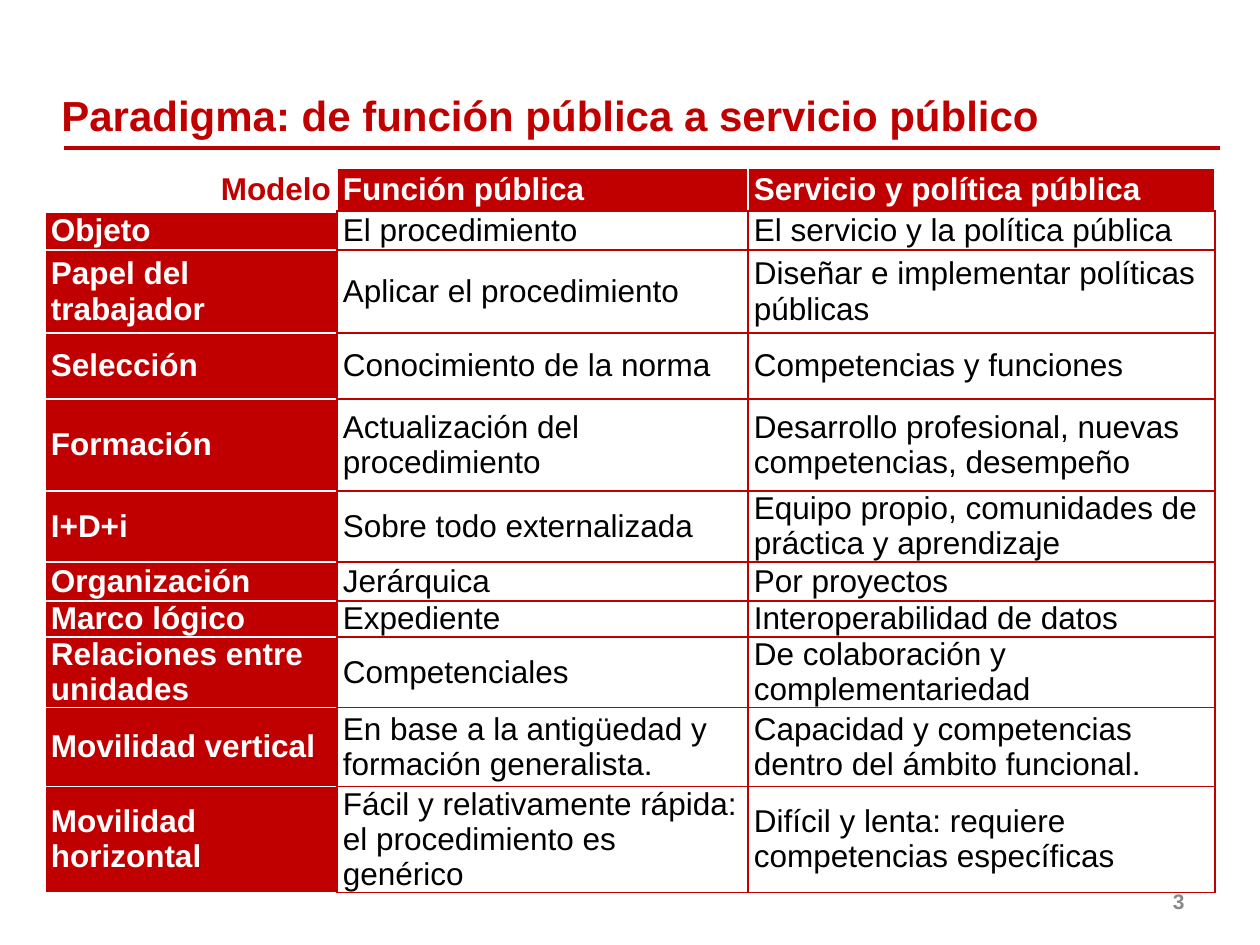
from lxml import etree
from pptx import Presentation
from pptx.dml.color import RGBColor
from pptx.enum.shapes import MSO_CONNECTOR
from pptx.enum.text import MSO_ANCHOR, PP_ALIGN
from pptx.oxml.ns import qn
from pptx.util import Emu, Pt

LEFT, RIGHT = PP_ALIGN.LEFT, PP_ALIGN.RIGHT
MIDDLE = MSO_ANCHOR.MIDDLE
STRAIGHT = MSO_CONNECTOR.STRAIGHT

COLORS = {"red": "C00000", "white": "FFFFFF", "black": "000000", "gray": "898989"}

COL_WIDTHS = [292, 411, 467]
ROW_HEIGHTS = [43, 39, 83, 66, 92, 71, 39, 36, 70, 79, 106]
ROWS = [
    ("Modelo", "Función pública", "Servicio y política pública"),
    ("Objeto", "El procedimiento", "El servicio y la política pública"),
    ("Papel del trabajador", "Aplicar el procedimiento",
     "Diseñar e implementar políticas públicas"),
    ("Selección", "Conocimiento de la norma", "Competencias y funciones"),
    ("Formación", "Actualización del procedimiento",
     "Desarrollo profesional, nuevas competencias, desempeño"),
    ("I+D+i", "Sobre todo externalizada",
     "Equipo propio, comunidades de práctica y aprendizaje"),
    ("Organización", "Jerárquica", "Por proyectos"),
    ("Marco lógico", "Expediente", "Interoperabilidad de datos"),
    ("Relaciones entre unidades", "Competenciales",
     "De colaboración y complementariedad"),
    ("Movilidad vertical", "En base a la antigüedad y formación generalista.",
     "Capacidad y competencias dentro del ámbito funcional."),
    ("Movilidad horizontal",
     "Fácil y relativamente rápida: el procedimiento es genérico",
     "Difícil y lenta: requiere competencias específicas"),
]


def px(n):
    return Emu(round(n * 914400 / 126))


def rgb(color):
    return RGBColor.from_string(COLORS[color])


def cell_style(row, col):
    """Return fill, text colour and the left, right, top, bottom borders."""
    red, white = ("red", 1), ("white", 1)
    if row == 0 and col == 0:
        return "white", "red", (white, white, white, ("white", 3))
    if row == 0:
        return "red", "white", (white, white, white, red)
    if col == 0:
        return "red", "white", (white, red, white, white)
    return "white", "black", (red, red, red, red)


class SlideBuilder:
    font = "Arial"

    def __init__(self, slide):
        self.slide = slide

    def add_text(self, tf, text, size, color, bold=True, align=LEFT):
        tf.word_wrap = True
        p = tf.paragraphs[0]
        p.alignment = align
        r = p.add_run()
        r.text = text
        r.font.name = self.font
        r.font.size = Pt(size)
        r.font.bold = bold
        r.font.color.rgb = rgb(color)

    def text_box(self, x, y, w, h, text, size, color, align=LEFT):
        sp = self.slide.shapes.add_textbox(px(x), px(y), px(w), px(h))
        sp.text_frame.vertical_anchor = MIDDLE
        self.add_text(sp.text_frame, text, size, color, align=align)

    def line(self, x1, y1, x2, y2, color, width):
        cxn = self.slide.shapes.add_connector(STRAIGHT, px(x1), px(y1), px(x2), px(y2))
        cxn.line.color.rgb = rgb(color)
        cxn.line.width = Pt(width)
        etree.SubElement(cxn._element.spPr, qn("a:effectLst"))

    def borders(self, cell, sides):
        tc_pr = cell._tc.get_or_add_tcPr()
        for i, (tag, (color, width)) in enumerate(zip(("lnL", "lnR", "lnT", "lnB"), sides)):
            ln = etree.Element(qn(f"a:{tag}"), w=str(Pt(width)))
            fill = etree.SubElement(ln, qn("a:solidFill"))
            etree.SubElement(fill, qn("a:srgbClr"), val=COLORS[color])
            tc_pr.insert(i, ln)

    def table(self, x, y, col_widths, row_heights, rows):
        table = self.slide.shapes.add_table(
            len(rows), len(col_widths), px(x), px(y),
            px(sum(col_widths)), px(sum(row_heights))).table
        table.first_row = table.horz_banding = False
        for column, width in zip(table.columns, col_widths):
            column.width = px(width)
        for i, (height, texts) in enumerate(zip(row_heights, rows)):
            table.rows[i].height = px(height)
            for j, text in enumerate(texts):
                cell = table.cell(i, j)
                fill, color, sides = cell_style(i, j)
                cell.fill.solid()
                cell.fill.fore_color.rgb = rgb(fill)
                cell.vertical_anchor = MIDDLE
                cell.margin_left = cell.margin_right = px(6)
                cell.margin_top = cell.margin_bottom = 0
                self.borders(cell, sides)
                self.add_text(cell.text_frame, text, 18, color, bold=i == 0 or j == 0,
                              align=RIGHT if i == j == 0 else LEFT)


def main():
    prs = Presentation()
    prs.slide_width, prs.slide_height = px(1260), px(945)
    s = SlideBuilder(prs.slides.add_slide(prs.slide_layouts[6]))
    s.line(64, 148, 1220, 148, "red", 2.25)
    s.table(45, 168, COL_WIDTHS, ROW_HEIGHTS, ROWS)
    s.text_box(49, 80, 1211, 69, "Paradigma: de función pública a servicio público", 24, "red")
    s.text_box(903, 876, 294, 50, "3", 12, "gray", RIGHT)
    prs.save("out.pptx")


if __name__ == "__main__":
    main()
